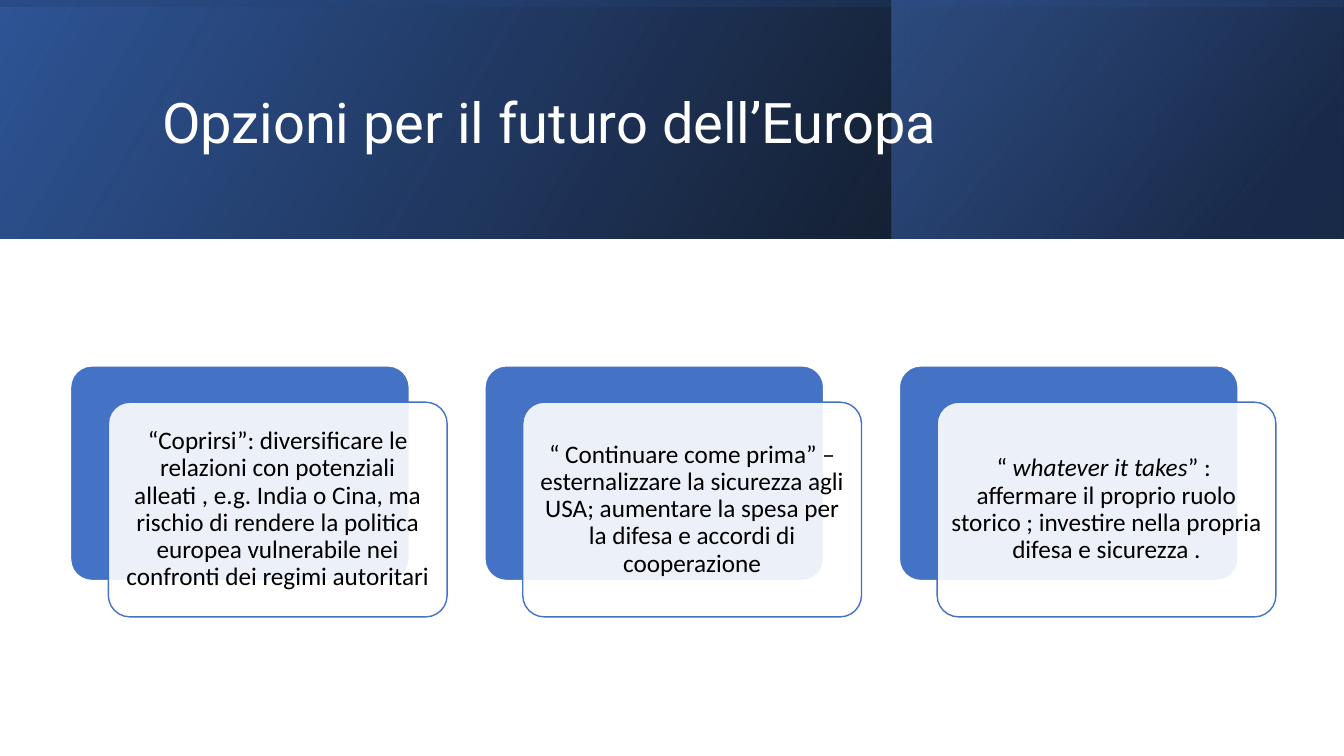
"""Build the slide on the options for the future of Europe."""
from pptx import Presentation
from pptx.dml.color import RGBColor
from pptx.enum.shapes import MSO_SHAPE
from pptx.enum.text import MSO_ANCHOR, PP_ALIGN
from pptx.oxml.ns import qn
from pptx.oxml.xmlchemy import OxmlElement
from pptx.util import Inches, Pt

RECTANGLE, ROUNDED = MSO_SHAPE.RECTANGLE, MSO_SHAPE.ROUNDED_RECTANGLE
LEFT, CENTER, MIDDLE = PP_ALIGN.LEFT, PP_ALIGN.CENTER, MSO_ANCHOR.MIDDLE
BLUE, WHITE, BLACK = "4472C4", "FFFFFF", "000000"
WIDTH, HEIGHT, BAND_HEIGHT = 13.33, 7.5, 2.37

TITLE = "Opzioni per il futuro dell’Europa"
TITLE_BOX = (1.51, 0.38, 10.63, 1.72)
# Each band: box, rotation, clockwise gradient angle, stops (position, colour, opacity)
BANDS = [
    ((0, 0, WIDTH, BAND_HEIGHT), 0, 330, [(0, BLACK, 96), (100, "2F5597", 100)]),
    ((8.84, 0, 4.48, BAND_HEIGHT), 0, 320, [(19, "203864", 68), (100, BLUE, 48)]),
    (((WIDTH - BAND_HEIGHT) / 2, (BAND_HEIGHT - WIDTH) / 2, BAND_HEIGHT, WIDTH),
     270, 350, [(23, "2F5597", 16), (99, BLACK, 45)]),
]
OPTIONS = [
    [("“Coprirsi”: diversificare le relazioni con potenziali alleati , e.g. India o Cina, "
      "ma rischio di rendere la politica europea vulnerabile nei confronti dei regimi "
      "autoritari", False)],
    [("“ Continuare come prima” – esternalizzare la sicurezza agli USA; aumentare la spesa "
      "per la difesa e accordi di cooperazione", False)],
    [("“ ", False), ("whatever it takes", True),
     ("” :  affermare il proprio ruolo storico ; investire nella propria difesa e "
      "sicurezza .", False)],
]
CARD_LEFT, CARD_TOP, CARD_WIDTH, CARD_HEIGHT = 0.7, 3.63, 3.36, 2.13
CARD_PITCH, FRONT_SHIFT_X, FRONT_SHIFT_Y = 4.11, 0.375, 0.36


def rgb(value):
    return RGBColor.from_string(value)


def set_opacity(shape, values):
    for color, value in zip(shape._element.spPr.iter(qn("a:srgbClr")), values):
        if value < 100:
            alpha = OxmlElement("a:alpha")
            alpha.set("val", str(value * 1000))
            color.append(alpha)


def add_shape(slide, kind, box):
    shape = slide.shapes.add_shape(kind, *map(Inches, box))
    shape.shadow.inherit = False
    return shape


def add_band(slide, box, rotation, angle, stops):
    band = add_shape(slide, RECTANGLE, box)
    band.rotation = rotation
    band._element.spPr.find(qn("a:xfrm")).set("flipH", "1")
    band.line.fill.background()
    band.fill.gradient()
    band.fill.gradient_angle = 360 - angle
    for stop, (position, color, _) in zip(band.fill.gradient_stops, stops):
        stop.position = position / 100
        stop.color.rgb = rgb(color)
    set_opacity(band, [opacity for _, _, opacity in stops])


def add_card(slide, left, top, fill, line):
    card = add_shape(slide, ROUNDED, (left, top, CARD_WIDTH, CARD_HEIGHT))
    card.adjustments[0] = 0.1
    card.fill.solid()
    card.fill.fore_color.rgb = rgb(fill)
    card.line.color.rgb = rgb(line)
    card.line.width = Pt(1)
    return card


def write_text(shape, runs, font_name, size, color, alignment, margins):
    frame = shape.text_frame
    formats = {"word_wrap": True, "vertical_anchor": MIDDLE, **margins}
    for name, value in formats.items():
        setattr(frame, name, value)
    paragraph = frame.paragraphs[0]
    paragraph.alignment = alignment
    paragraph.line_spacing = 0.9
    for text, italic in runs:
        run = paragraph.add_run()
        run.text = text
        for name, value in {"name": font_name, "size": Pt(size), "italic": italic}.items():
            setattr(run.font, name, value)
        run.font.color.rgb = rgb(color)


def main():
    presentation = Presentation()
    presentation.slide_width, presentation.slide_height = Inches(WIDTH), Inches(HEIGHT)
    slide = presentation.slides.add_slide(presentation.slide_layouts[5])

    for band in BANDS:
        add_band(slide, *band)

    title = slide.shapes.title
    for name, value in zip(("left", "top", "width", "height"), TITLE_BOX):
        setattr(title, name, Inches(value))
    write_text(title, [(TITLE, False)], "Roboto", 40, WHITE, LEFT, {})
    slide.shapes._spTree.append(title._element)

    sides = ("left", "top", "right", "bottom")
    margins = {f"margin_{side}": Inches(0.07) for side in sides}
    for index, runs in enumerate(OPTIONS):
        left = CARD_LEFT + index * CARD_PITCH
        add_card(slide, left, CARD_TOP, BLUE, WHITE)
        front = add_card(slide, left + FRONT_SHIFT_X, CARD_TOP + FRONT_SHIFT_Y, WHITE, BLUE)
        set_opacity(front, [90])
        write_text(front, runs, "Calibri", 18, BLACK, CENTER, margins)

    presentation.save("out.pptx")


if __name__ == "__main__":
    main()
